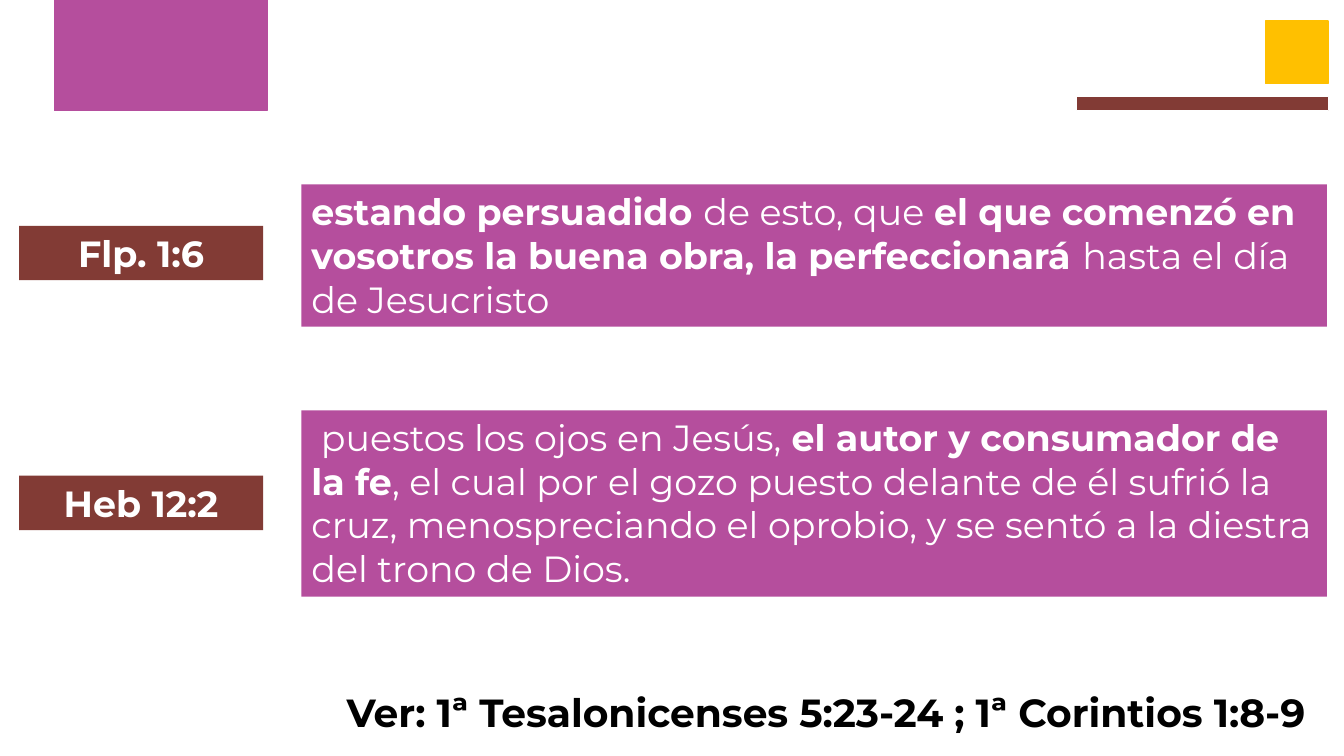
import pptx
import pptx.dml.color
import pptx.enum.shapes
import pptx.enum.text
import pptx.util
from dataclasses import dataclass

Inches = pptx.util.Inches
Align = pptx.enum.text.PP_ALIGN


@dataclass(frozen=True)
class Theme:
    font: str = "Montserrat"
    purple: str = "B54E9D"
    brown: str = "823B35"
    gold: str = "FFC000"
    white: str = "FFFFFF"
    black: str = "000000"
    verse_size: int = 26
    note_size: int = 28


class VerseSlide:
    def __init__(self, prs, theme):
        self.theme = theme
        self.slide = prs.slides.add_slide(prs.slide_layouts[6])

    def block(self, left, top, width, height, fill, line=None):
        """Add a filled rectangle, with an outline if a line colour is given."""
        block = self.slide.shapes.add_shape(
            pptx.enum.shapes.MSO_SHAPE.RECTANGLE,
            Inches(left), Inches(top), Inches(width), Inches(height))
        block.shadow.inherit = False
        block.fill.solid()
        block.fill.fore_color.rgb = pptx.dml.color.RGBColor.from_string(fill)
        if line:
            block.line.color.rgb = pptx.dml.color.RGBColor.from_string(line)
            block.line.width = pptx.util.Pt(1)
        else:
            block.line.fill.background()
        return block

    def add_text(self, holder, runs, size, color, align=Align.LEFT):
        """Fill a shape with one paragraph of (text, bold) runs."""
        frame = holder.text_frame
        frame.word_wrap = True
        frame.auto_size = pptx.enum.text.MSO_AUTO_SIZE.SHAPE_TO_FIT_TEXT
        frame.vertical_anchor = pptx.enum.text.MSO_ANCHOR.TOP
        paragraph = frame.paragraphs[0]
        paragraph.alignment = align
        for text, bold in runs:
            run = paragraph.add_run()
            run.text = text
            run.font.name = self.theme.font
            run.font.size = pptx.util.Pt(size)
            run.font.bold = bold
            run.font.color.rgb = pptx.dml.color.RGBColor.from_string(color)

    def reference(self, top, citation):
        label = self.block(0.19, top, 2.42, 0.54, self.theme.brown)
        self.add_text(label, [(citation, True)], self.theme.verse_size,
                      self.theme.white, Align.CENTER)

    def verse(self, top, height, runs):
        passage = self.block(2.99, top, 10.17, height, self.theme.purple)
        self.add_text(passage, runs, self.theme.verse_size, self.theme.white)

    def note(self, left, top, width, height, text):
        see_also = self.slide.shapes.add_textbox(
            Inches(left), Inches(top), Inches(width), Inches(height))
        self.add_text(see_also, [(text, True)], self.theme.note_size,
                      self.theme.black)


def main():
    prs = pptx.Presentation()
    prs.slide_width, prs.slide_height = Inches(13.33), Inches(7.5)
    theme = Theme()
    page = VerseSlide(prs, theme)

    # Verses with their references
    page.reference(4.72, "Heb 12:2")
    page.verse(4.07, 1.85, [
        (" puestos los ojos en Jesús, ", False),
        ("el autor y consumador de la fe", True),
        (", el cual por el gozo puesto delante de él sufrió la cruz, "
         "menospreciando el oprobio, y se sentó a la diestra del trono de Dios.",
         False),
    ])
    page.reference(2.24, "Flp. 1:6")
    page.verse(1.83, 1.41, [
        ("estando persuadido ", True),
        ("de esto, que ", False),
        ("el que comenzó en vosotros la buena obra, la perfeccionará ", True),
        ("hasta el día de Jesucristo", False),
    ])

    # Further reading
    page.note(3.34, 6.78, 9.99, 0.57,
              "Ver: 1ª Tesalonicenses 5:23-24 ; 1ª Corintios 1:8-9")

    # Decoration along the top edge
    page.block(0.54, 0, 2.11, 1.1, theme.purple, line=theme.purple)
    page.block(12.55, 0.21, 0.62, 0.62, theme.gold, line=theme.gold)
    page.block(10.68, 0.96, 2.5, 0.14, theme.brown, line=theme.white)

    prs.save("out.pptx")


if __name__ == "__main__":
    main()
